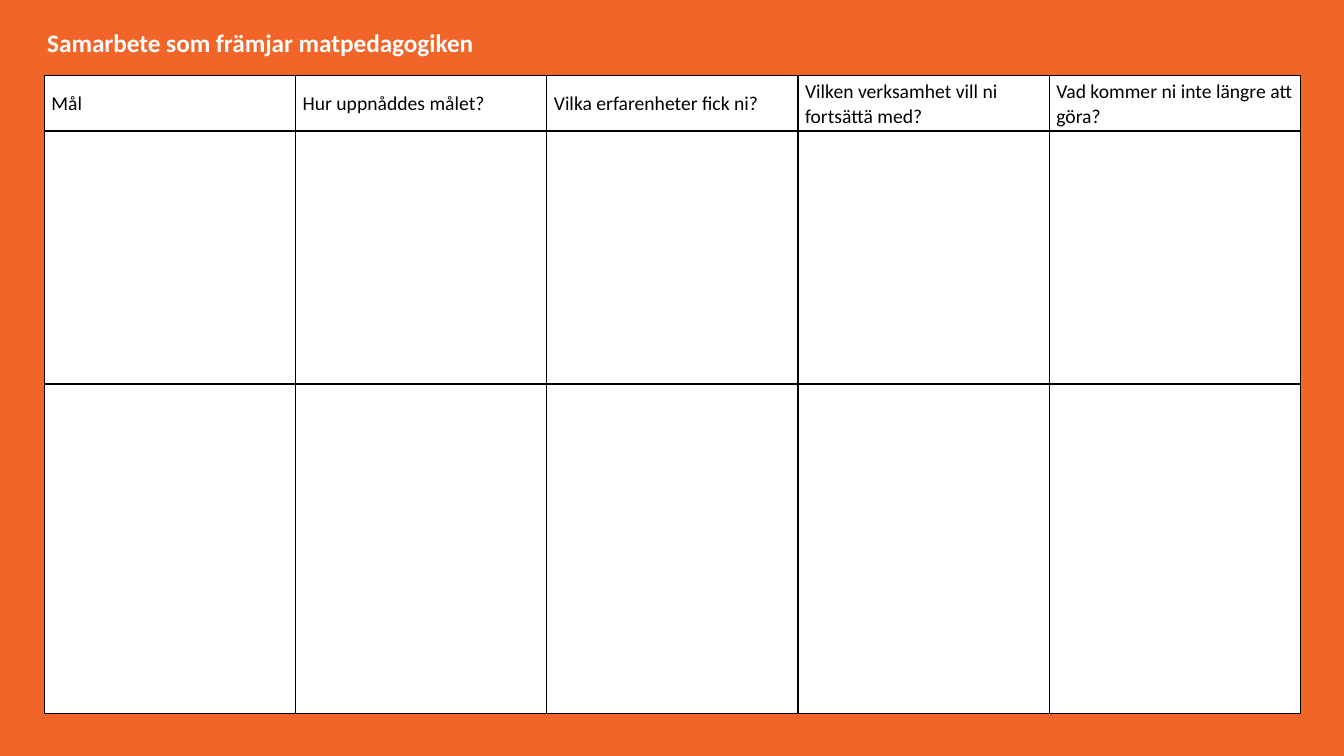
from lxml.etree import SubElement
from pptx import Presentation
from pptx.dml.color import RGBColor as RGB
from pptx.enum.text import MSO_ANCHOR as Anchor, MSO_AUTO_SIZE as AutoSize
from pptx.oxml.ns import qn
from pptx.util import Inches, Pt

COLOURS = {"page": "F26529", "cell": "FFFFFF", "title": "FFFFFF",
           "question": "000000", "border": "000000"}
TITLE = "Samarbete som främjar matpedagogiken"
QUESTIONS = [
    "Mål",
    "Hur uppnåddes målet?",
    "Vilka erfarenheter fick ni?",
    "Vilken verksamhet vill ni fortsättä med?",
    "Vad kommer ni inte längre att göra?",
]
ROW_HEIGHTS = [0.55, 2.51, 3.27]
TITLE_BOX = (0.37, 0.22, 5.21, 0.4)
TABLE_BOX = (0.44, 0.75, 12.46, sum(ROW_HEIGHTS))


def apply(target, values):
    for name, value in values.items():
        setattr(target, name, value)


def write(paragraph, text, size, colour, bold=False):
    run = paragraph.add_run()
    run.text = text
    apply(run.font, {"name": "Calibri", "size": Pt(size), "bold": bold})
    run.font.color.rgb = RGB.from_string(COLOURS[colour])


def paint(fill, colour):
    fill.solid()
    fill.fore_color.rgb = RGB.from_string(COLOURS[colour])


def outline(cell):
    properties = cell._tc.get_or_add_tcPr()
    for side in ("lnL", "lnR", "lnT", "lnB"):
        line = SubElement(properties, qn(f"a:{side}"), w=str(Pt(1)))
        solid = SubElement(line, qn("a:solidFill"))
        SubElement(solid, qn("a:srgbClr"), val=COLOURS["border"])


def add_title(slide, box):
    frame = slide.shapes.add_textbox(*map(Inches, box)).text_frame
    apply(frame, {"word_wrap": True, "auto_size": AutoSize.SHAPE_TO_FIT_TEXT})
    write(frame.paragraphs[0], TITLE, 18, "title", bold=True)


def add_evaluation_table(slide, box):
    table = slide.shapes.add_table(
        len(ROW_HEIGHTS), len(QUESTIONS), *map(Inches, box)).table
    apply(table, {"first_row": False, "horz_banding": False})
    for row, height in zip(table.rows, ROW_HEIGHTS):
        row.height = Inches(height)
    for column in table.columns:
        column.width = Inches(box[2] / len(QUESTIONS))

    # White answer grid with thin black rules
    for cell in table.iter_cells():
        outline(cell)
        paint(cell.fill, "cell")

    # Questions in the top row
    for cell, question in zip(table.rows[0].cells, QUESTIONS):
        apply(cell, {"vertical_anchor": Anchor.MIDDLE,
                     "margin_left": Inches(0.07), "margin_right": Inches(0.07),
                     "margin_top": 0, "margin_bottom": 0})
        paragraph = cell.text_frame.paragraphs[0]
        apply(paragraph, {"line_spacing": 1.07, "space_after": Pt(8)})
        write(paragraph, question, 14, "question")


def main():
    deck = Presentation()
    apply(deck, {"slide_width": Inches(13.33), "slide_height": Inches(7.5)})
    slide = deck.slides.add_slide(deck.slide_layouts[6])
    paint(slide.background.fill, "page")
    add_evaluation_table(slide, TABLE_BOX)
    add_title(slide, TITLE_BOX)
    deck.save("out.pptx")


if __name__ == "__main__":
    main()
